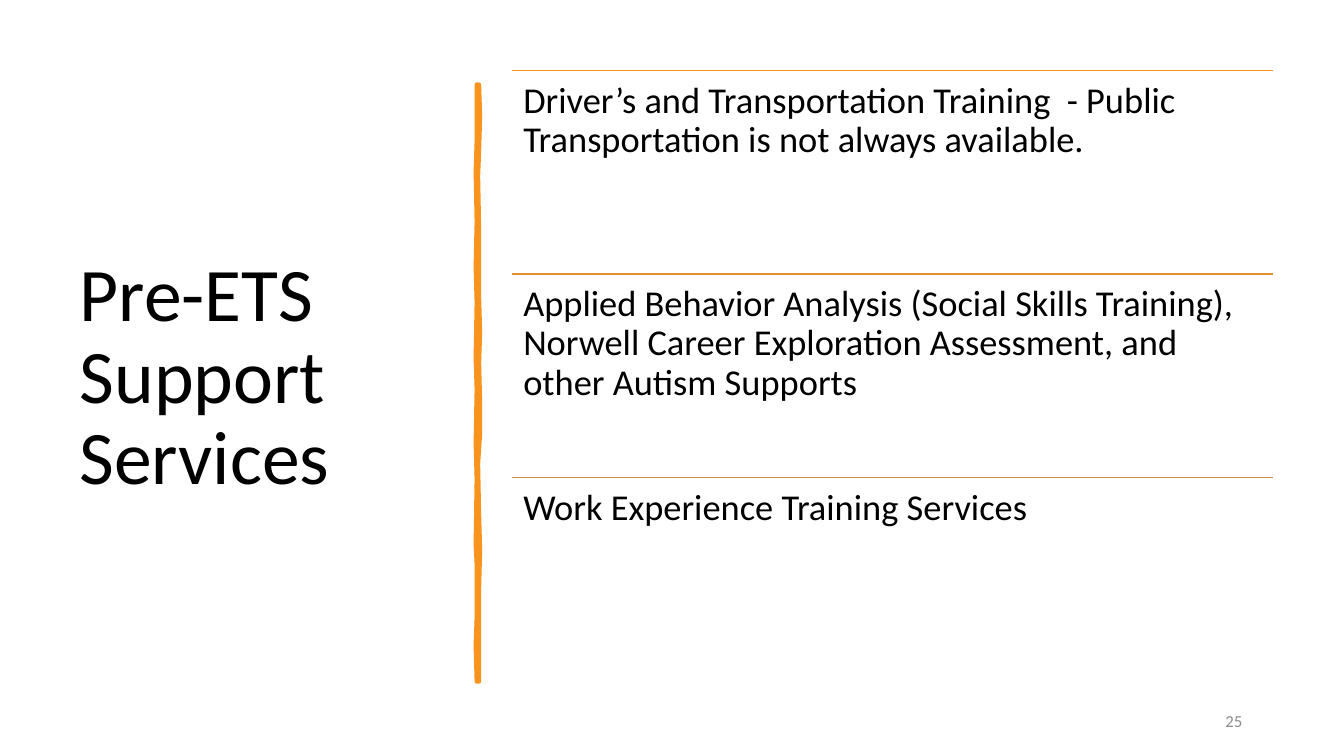
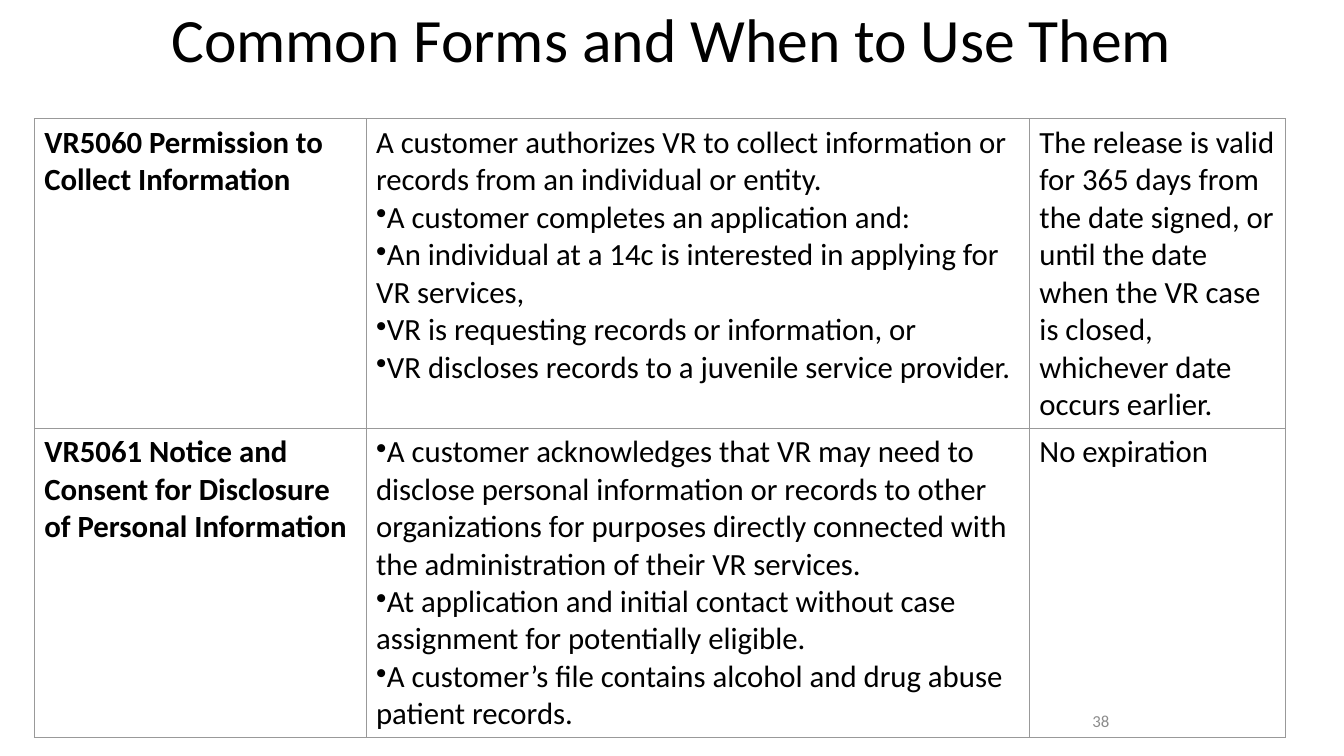
import pptx
import pptx.util
import pptx.dml.color
import pptx.enum.text
import pptx.enum.shapes
import pptx.oxml
import pptx.oxml.ns

Inches = pptx.util.Inches
Align = pptx.enum.text.PP_ALIGN
Anchor = pptx.enum.text.MSO_ANCHOR

# Shared style
FONT = "Calibri"
BLACK, GREY, ORANGE, BORDER = "000000", "8C8C8C", "F8931D", "999999"
TITLE_ONLY = 5
NUMBER_BOX = (9.42, 6.95, 3, 0.4)

# Slide content
SERVICES = [
    ("Driver’s and Transportation Training  - Public Transportation is not always available.",
     ORANGE),
    ("Applied Behavior Analysis (Social Skills Training), Norwell Career Exploration "
     "Assessment, and other Autism Supports", "E3902D"),
    ("Work Experience Training Services", "CE8D3E"),
]
FORMS = [
    (["VR5060 Permission to Collect Information"],
     ["A customer authorizes VR to collect information or records from an individual or entity.",
      "•A customer completes an application and:",
      "•An individual at a 14c is interested in applying for VR services,",
      "•VR is requesting records or information, or",
      "•VR discloses records to a juvenile service provider."],
     ["The release is valid for 365 days from the date signed, or until the date when the "
      "VR case is closed, whichever date occurs earlier."]),
    (["VR5061 Notice and Consent for Disclosure of Personal Information"],
     ["•A customer acknowledges that VR may need to disclose personal information or records "
      "to other organizations for purposes directly connected with the administration of "
      "their VR services.",
      "•At application and initial contact without case assignment for potentially eligible.",
      "•A customer’s file contains alcohol and drug abuse patient records."],
     ["No expiration"]),
]

# Edges of the hand-drawn divider, as (x, y)
DIVIDER_RIGHT = [(4.75, 0.84), (4.76, 1.15), (4.75, 1.5), (4.74, 1.75), (4.75, 2.26),
                 (4.75, 2.94), (4.76, 3.3), (4.75, 3.6), (4.76, 4), (4.76, 4.3),
                 (4.74, 4.6), (4.75, 5.1), (4.76, 5.45), (4.75, 5.84), (4.75, 6.76)]
DIVIDER_LEFT = [(4.73, 6.76), (4.72, 6.4), (4.73, 6.13), (4.73, 5.6), (4.72, 5.4),
                (4.73, 4.75), (4.72, 4.4), (4.73, 3.86), (4.72, 3.55), (4.73, 3),
                (4.72, 2.65), (4.73, 2.2), (4.72, 1.7), (4.73, 1.4), (4.73, 0.84)]


def color(hex_value):
    return pptx.dml.color.RGBColor.from_string(hex_value)


def set_all(target, values):
    for name, value in values.items():
        setattr(target, name, value)


def add_xml(parent, tag, attributes="", inner="", index=None):
    element = pptx.oxml.parse_xml(
        f'<a:{tag} {pptx.oxml.ns.nsdecls("a")} {attributes}>{inner}</a:{tag}>')
    parent.insert(len(parent) if index is None else index, element)


def write(frame, lines, size, hex_value=BLACK, bold=False, **layout):
    """Fill a text frame; a line that starts with • becomes a bullet."""
    frame.word_wrap = True
    for number, line in enumerate(lines):
        para = frame.add_paragraph() if number else frame.paragraphs[0]
        set_all(para, layout)
        span = para.add_run()
        span.text = line.removeprefix("•")
        set_all(span.font, {"name": FONT, "size": pptx.util.Pt(size), "bold": bold})
        span.font.color.rgb = color(hex_value)
        if line.startswith("•"):
            properties = para._p.get_or_add_pPr()
            set_all(properties, {"marL": 0, "indent": 0})
            add_xml(properties, "buChar", 'char="•"')


def add_text(page, place, lines, size, inset=(0.1, 0.05), anchor=Anchor.TOP, **style):
    frame = page.shapes.add_textbox(*map(Inches, place)).text_frame
    across, down = map(Inches, inset)
    set_all(frame, {"margin_left": across, "margin_right": across, "margin_top": down,
                    "margin_bottom": down, "vertical_anchor": anchor})
    write(frame, lines, size, **style)


def add_page(deck, title, place, size, align, number, number_align):
    """Start a slide with its title and slide number."""
    page = deck.slides.add_slide(deck.slide_layouts[TITLE_ONLY])
    shape = page.shapes.title
    set_all(shape, dict(zip(("left", "top", "width", "height"), map(Inches, place))))
    set_all(shape.text_frame, {"vertical_anchor": Anchor.MIDDLE,
                               "auto_size": pptx.enum.text.MSO_AUTO_SIZE.NONE})
    write(shape.text_frame, [title], size, alignment=align, line_spacing=0.9)
    add_text(page, NUMBER_BOX, [number], 12, anchor=Anchor.MIDDLE,
             hex_value=GREY, alignment=number_align)
    return page


def add_rule(page, left, top, width, hex_value):
    rule = page.shapes.add_connector(
        pptx.enum.shapes.MSO_CONNECTOR.STRAIGHT,
        *map(Inches, (left, top, left + width, top)))
    rule.line.color.rgb = color(hex_value)
    rule.line.width = pptx.util.Pt(1)
    add_xml(rule._element.spPr, "effectLst")


def add_divider(page):
    start, *rest = [(Inches(x), Inches(y)) for x, y in DIVIDER_RIGHT + DIVIDER_LEFT]
    builder = page.shapes.build_freeform(*start)
    builder.add_line_segments(rest, close=True)
    divider = builder.convert_to_shape()
    divider.shadow.inherit = False
    divider.fill.solid()
    divider.fill.fore_color.rgb = color(ORANGE)
    divider.line.color.rgb = color(ORANGE)
    divider.line.width = pptx.util.Pt(3.25)
    add_xml(divider.line._get_or_add_ln(), "round")


def add_borders(cell):
    properties = cell._tc.get_or_add_tcPr()
    inner = f'<a:solidFill><a:srgbClr val="{BORDER}"/></a:solidFill>'
    for index, side in enumerate("LRTB"):
        add_xml(properties, "ln" + side, f'w="{pptx.util.Pt(0.75)}"', inner, index)


def add_forms_table(page, left, top, widths, row_height):
    table = page.shapes.add_table(
        len(FORMS), len(widths),
        *map(Inches, (left, top, sum(widths), row_height * len(FORMS)))).table
    set_all(table, {"first_row": False, "horz_banding": False})
    for column, width in zip(table.columns, widths):
        column.width = Inches(width)
    for row, form in zip(table.rows, FORMS):
        for index, (cell, lines) in enumerate(zip(row.cells, form)):
            cell.fill.background()
            add_borders(cell)
            write(cell.text_frame, lines, 22, bold=index == 0)


def build_services(deck):
    page = add_page(deck, "Pre-ETS Support Services", (0.69, 0.7, 3.74, 6.11), 54,
                    Align.LEFT, "25", Align.RIGHT)
    add_divider(page)
    left, first_top, width, height = 5.08, 0.7, 7.55, 2.02
    for index, (service, hex_value) in enumerate(SERVICES):
        top = first_top + index * height
        add_rule(page, left, top, width, hex_value)
        add_text(page, (left, top, width, height), [service], 26,
                 inset=(0.11, 0.11), line_spacing=0.9)


def build_forms(deck):
    page = add_page(deck, "Common Forms and When to Use Them", (0, 0, 13.33, 0.84), 44,
                    Align.CENTER, "38", Align.CENTER)
    add_forms_table(page, 0.34, 1.18, (3.29, 6.58, 2.54), 3.07)


def main():
    deck = pptx.Presentation()
    set_all(deck, {"slide_width": Inches(13.33), "slide_height": Inches(7.5)})
    build_services(deck)
    build_forms(deck)
    deck.save("out.pptx")


if __name__ == "__main__":
    main()
